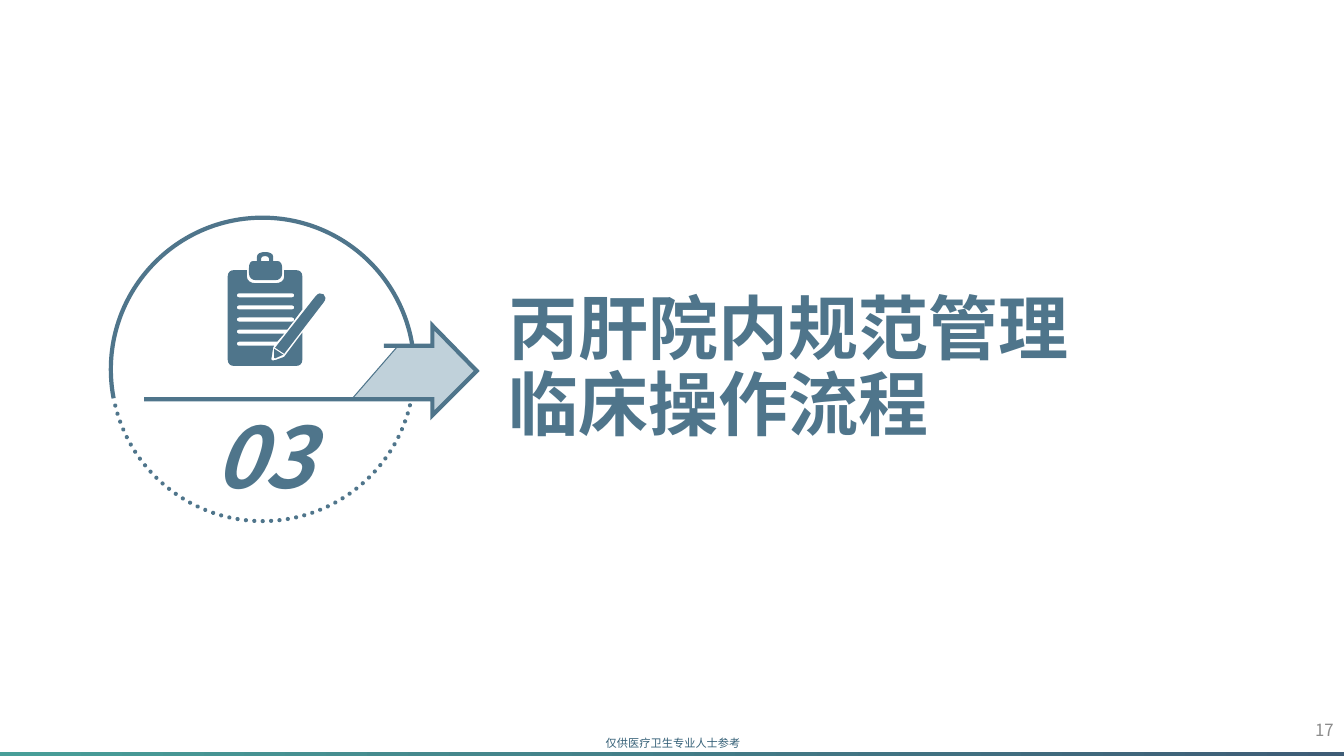
from math import cos, sin, tan, radians
from lxml.etree import SubElement
from pptx import Presentation
from pptx.dml.color import RGBColor
from pptx.enum.dml import MSO_LINE
from pptx.enum.shapes import MSO_SHAPE as Shape
from pptx.enum.text import MSO_ANCHOR as Anchor, PP_ALIGN as Align
from pptx.oxml.ns import qn
from pptx.util import Inches, Pt

FONT = "Noto Sans CJK SC"
BLUE = "4F758B"
PALE = "C0D1DA"


def color(code):
    """Return the colour for a hex string."""
    return RGBColor.from_string(code)


def add_text(page, box, lines, size, code, font=FONT, bold=False, italic=False,
             align=Align.LEFT, anchor=Anchor.TOP, wrap=True, spacing=1.0):
    """Place one paragraph, its lines parted by line breaks, in a box."""
    frame = page.shapes.add_textbox(*map(Inches, box)).text_frame
    frame.word_wrap = wrap
    frame.vertical_anchor = anchor
    para = frame.paragraphs[0]
    para.alignment = align
    para.line_spacing = spacing
    for index, line in enumerate(lines):
        if index:
            para.add_line_break()
        span = para.add_run()
        span.text = line
        span.font.name = font
        span.font.size = Pt(size)
        span.font.bold = bold
        span.font.italic = italic
        span.font.color.rgb = color(code)
        SubElement(span.font._element, qn("a:ea")).set("typeface", FONT)


def bend(shape, steps):
    """Turn each run of three line steps that stands for a curve into one curve."""
    nodes = iter(shape.element.findall(".//" + qn("a:lnTo")))
    for step in steps:
        node = next(nodes)
        if len(step) == 3:
            node.tag = qn("a:cubicBezTo")
            for _ in range(2):
                extra = next(nodes)
                node.append(extra[0])
                extra.getparent().remove(extra)


def add_outline(page, origin, contours, fill=None, width=0, closed=True, dotted=False):
    """Draw contours of points and three-point curves, in inches from the origin."""
    left, top = origin

    def place(point):
        return Inches(left + point[0]), Inches(top + point[1])

    builder = page.shapes.build_freeform(*place(contours[0][0][0]), scale=1.0)
    for index, (start, *steps) in enumerate(contours):
        if index:
            builder.move_to(*place(start[0]))
        builder.add_line_segments([place(point) for step in steps for point in step], close=closed)
    shape = builder.convert_to_shape()
    bend(shape, [step for contour in contours for step in contour[1:]])
    shape.shadow.inherit = False
    if fill:
        shape.fill.solid()
        shape.fill.fore_color.rgb = color(fill)
    else:
        shape.fill.background()
    if not width:
        shape.line.fill.background()
        return
    shape.line.color.rgb = color(BLUE)
    shape.line.width = Pt(width)
    stroke = shape.element.spPr.find(qn("a:ln"))
    if dotted:
        shape.line.dash_style = MSO_LINE.ROUND_DOT
        stroke.set("cap", "rnd")
    SubElement(stroke, qn("a:miter")).set("lim", "800000")


def arc(radius, *angles):
    """Return curves along a circle in a square box, from angle to angle in degrees."""
    def at(angle, reach=0):
        return (radius * (1 + cos(angle) - reach * sin(angle)),
                radius * (1 + sin(angle) + reach * cos(angle)))

    turns = [radians(angle) for angle in angles]
    steps = [[at(turns[0])]]
    for start, end in zip(turns, turns[1:]):
        reach = 4 / 3 * tan((end - start) / 4)
        steps.append([at(start, reach), at(end, -reach), at(end)])
    return steps


def toward(start, end, share):
    """Return the point at a share of the way from start to end."""
    return tuple(a + (b - a) * share for a, b in zip(start, end))


def rounded(corners):
    """Return a polygon whose (x, y, radius) corners are rounded."""
    steps = []
    for index, (x, y, radius) in enumerate(corners):
        corner = (x, y)
        if not radius:
            steps.append([corner])
            continue
        ends = []
        for other in (corners[index - 1], corners[(index + 1) % len(corners)]):
            length = ((other[0] - x) ** 2 + (other[1] - y) ** 2) ** 0.5
            ends.append(toward(corner, other[:2], min(radius / length, 0.5)))
        steps.append([ends[0]])
        steps.append([toward(ends[0], corner, 0.6), toward(ends[1], corner, 0.6), ends[1]])
    return steps


def add_clipboard(page, origin):
    """Draw the clipboard with its clip and pen."""
    clip = [(0.21, 0.09, 0.07), (0.29, 0.09, 0), (0.29, 0, 0.09), (0.45, 0, 0.09),
            (0.45, 0.09, 0), (0.54, 0.09, 0.07), (0.54, 0.28, 0.07), (0.21, 0.28, 0.07)]
    ring = [(0.33, 0.09, 0), (0.33, 0.04, 0.04), (0.41, 0.04, 0.04), (0.41, 0.09, 0)]
    pen = [(0.47, 0.95, 0), (0.91, 0.39, 0.06), (0.99, 0.45, 0.06), (0.56, 1.01, 0)]
    nib = [(0.46, 0.96, 0), (0.55, 1.02, 0), (0.46, 1.06, 0.01)]
    board = [(0, 0.18, 0.06), (0.19, 0.18, 0), (0.19, 0.31, 0.09), (0.56, 0.31, 0.09),
             (0.56, 0.18, 0), (0.74, 0.18, 0.06), (0.74, 0.57, 0), (0.59, 0.77, 0),
             (0.09, 0.77, 0.02), (0.09, 0.81, 0.02), (0.56, 0.81, 0), (0.49, 0.89, 0),
             (0.09, 0.89, 0.02), (0.09, 0.93, 0.02), (0.46, 0.93, 0), (0.45, 0.95, 0),
             (0.43, 1.08, 0.02), (0.48, 1.07, 0), (0.56, 1.04, 0), (0.74, 0.8, 0),
             (0.74, 1.13, 0.06), (0, 1.13, 0.06)]
    rules = [[(0.09, y, 0.02), (0.66, y, 0.02), (0.66, y + 0.04, 0.02), (0.09, y + 0.04, 0.02)]
             for y in (0.41, 0.53, 0.65)]
    for parts in ([clip, ring], [pen], [nib], [board, *rules]):
        add_outline(page, origin, [rounded(part) for part in parts], BLUE)


def add_emblem(page, box, number):
    """Draw the section circle with its arrow, icon and number."""
    left, top, size = box
    origin, radius = (left, top), size / 2
    add_text(page, (left + 0.14, top + 1.8, 2.75, 1.11), [number], 60, BLUE,
             bold=True, italic=True, align=Align.CENTER)
    add_outline(page, origin, [arc(radius, 10.5, 90, 169)], width=3, closed=False, dotted=True)
    head = [[point] for point in
            ((3.19, 1.8), (3.19, 1.96), (3.63, 1.52), (3.19, 1.07), (3.19, 1.27))]
    add_outline(page, origin, [[[(2.39, 1.8)], *head, [(2.85, 1.27)]]], PALE, 0.75)
    add_outline(page, origin, [arc(radius, 169, 180, 270, 351)], width=3, closed=False)
    add_outline(page, origin, [[[(0.33, 1.8)], *head, [(2.71, 1.27)]]], width=3, closed=False)
    add_clipboard(page, (left + 1.16, top + 0.34))


def add_footer(page, box, note, number):
    """Add the gradient strip, the note and the page number."""
    left, top, width, height = box
    strip = page.shapes.add_shape(Shape.RECTANGLE, *map(Inches, box))
    strip.shadow.inherit = False
    strip.line.fill.background()
    strip.fill.gradient()
    strip.fill.gradient_angle = 0
    for stop, code in zip(strip.fill.gradient_stops, ("489E98", "3E5C76")):
        stop.color.rgb = color(code)
    add_text(page, (left + 5.92, top - 0.2, 1.55, 0.24), [note], 8, "356077",
             font="Arial", wrap=False)
    add_text(page, (left + 10.34, top - 0.42, 3, 0.4), [number], 12, "8C8C8C",
             align=Align.RIGHT, anchor=Anchor.MIDDLE)


def build_section(deck):
    """Build the section opening slide."""
    page = deck.slides.add_slide(deck.slide_layouts[6])
    add_footer(page, (-0.01, 7.46, 13.39, 0.07), "仅供医疗卫生专业人士参考", "17")
    add_text(page, (4.95, 2.77, 7.27, 1.8), ["丙肝院内规范管理", "临床操作流程"], 50, BLUE,
             bold=True, anchor=Anchor.MIDDLE, spacing=0.9)
    add_emblem(page, (1.1, 2.16, 3.01), "03")


def main():
    """Create the deck and save it."""
    deck = Presentation()
    deck.slide_width, deck.slide_height = Inches(40) // 3, Inches(7.5)
    build_section(deck)
    deck.save("out.pptx")


if __name__ == "__main__":
    main()
